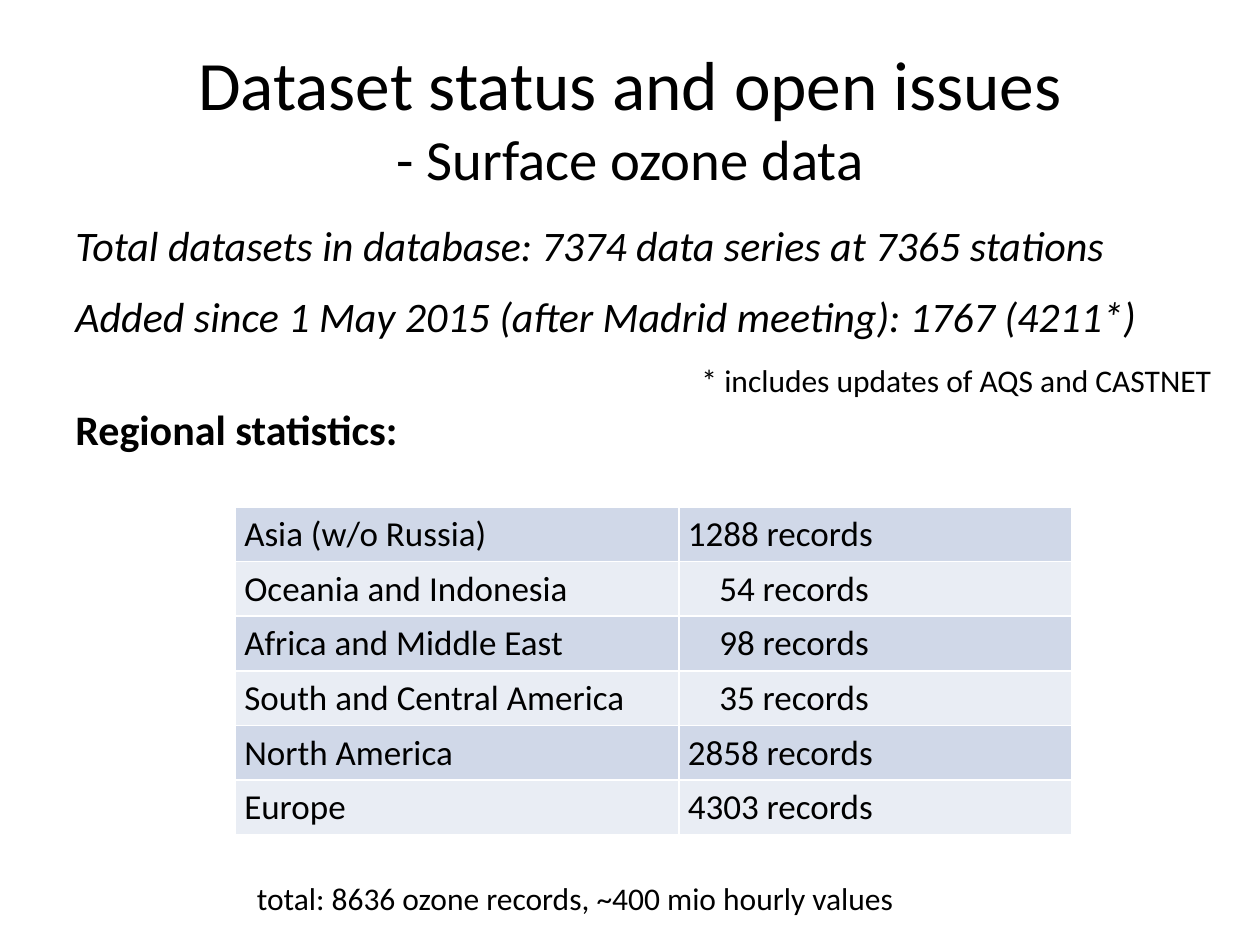
from lxml import etree
from pptx import Presentation
from pptx.dml.color import RGBColor
from pptx.enum.text import MSO_ANCHOR, PP_ALIGN
from pptx.oxml.ns import qn
from pptx.util import Pt

MIDDLE, TOP = MSO_ANCHOR.MIDDLE, MSO_ANCHOR.TOP
CENTER, LEFT = PP_ALIGN.CENTER, PP_ALIGN.LEFT


def color(hex_value):
    return RGBColor.from_string(hex_value)


def add_run(paragraph, text, size, **formats):
    run = paragraph.add_run()
    run.text = text
    run.font.color.rgb = color("000000")
    for key, value in {"name": "Calibri", "size": Pt(size), **formats}.items():
        setattr(run.font, key, value)


prs = Presentation()
prs.slide_width, prs.slide_height = Pt(720), Pt(540)
slide = prs.slides.add_slide(prs.slide_layouts[6])

# Title in two sizes
title = slide.shapes.add_textbox(Pt(36), Pt(21.6), Pt(648), Pt(90)).text_frame
title.word_wrap = True
title.vertical_anchor = MIDDLE
heading = title.paragraphs[0]
heading.alignment = CENTER
add_run(heading, "Dataset status and open issues", 39.6)
heading.add_line_break()
add_run(heading, "- Surface ozone data", 32.4)

# Key figures: text, space before, format
key_figures = [
    ("Total datasets in database: 7374 data series at 7365 stations", 0, {"italic": True}),
    ("Added since 1 May 2015 (after Madrid meeting): 1767 (4211*)", 12, {"italic": True}),
    ("Regional statistics:", 36, {"bold": True}),
]
summary = slide.shapes.add_textbox(Pt(36), Pt(121.7), Pt(648), Pt(357)).text_frame
summary.word_wrap = True
summary.vertical_anchor = TOP
for i, (text, space, formats) in enumerate(key_figures):
    paragraph = summary.add_paragraph() if i else summary.paragraphs[0]
    paragraph.space_before = Pt(space)
    add_run(paragraph, text, 24, **formats)

# Footnote and total
for text, left, top, width in [
    ("* includes updates of AQS and CASTNET", 393.8, 203, 309.6),
    ("total: 8636 ozone records, ~400 mio hourly values", 139.7, 499, 383),
]:
    note = slide.shapes.add_textbox(Pt(left), Pt(top), Pt(width), Pt(28.8)).text_frame
    note.word_wrap = False
    note.paragraphs[0].alignment = LEFT
    add_run(note.paragraphs[0], text, 18)

# Records by region
regions = [
    ("Asia (w/o Russia)", 1288),
    ("Oceania and Indonesia", 54),
    ("Africa and Middle East", 98),
    ("South and Central America", 35),
    ("North America", 2858),
    ("Europe", 4303),
]
ROW_HEIGHT = 31.2
statistics = slide.shapes.add_table(
    len(regions), 2, Pt(134.6), Pt(289.6), Pt(478), Pt(ROW_HEIGHT * len(regions))
).table
statistics.first_row = False
for column, width in zip(statistics.columns, (253.5, 224.5)):
    column.width = Pt(width)

for r, (region, count) in enumerate(regions):
    statistics.rows[r].height = Pt(ROW_HEIGHT)
    # Two-digit counts are set in by the width of the missing digits
    indent = 18 if count < 100 else 0
    for c, (text, left) in enumerate([(region, 5), (f"{count} records", 5 + indent)]):
        cell = statistics.cell(r, c)
        margins = {"margin_left": left, "margin_right": 5,
                   "margin_top": 3.6, "margin_bottom": 3.6}
        for key, value in margins.items():
            setattr(cell, key, Pt(value))
        add_run(cell.text_frame.paragraphs[0], text, 20)

        # White borders come before the fill in the cell properties
        properties = cell._tc.get_or_add_tcPr()
        for side in ("a:lnL", "a:lnR", "a:lnT", "a:lnB"):
            border = etree.SubElement(properties, qn(side), w=str(Pt(1)))
            border_fill = etree.SubElement(border, qn("a:solidFill"))
            etree.SubElement(border_fill, qn("a:srgbClr"), val="FFFFFF")
        cell.fill.solid()
        cell.fill.fore_color.rgb = color("E9EDF4" if r % 2 else "D0D8E8")

prs.save("out.pptx")
